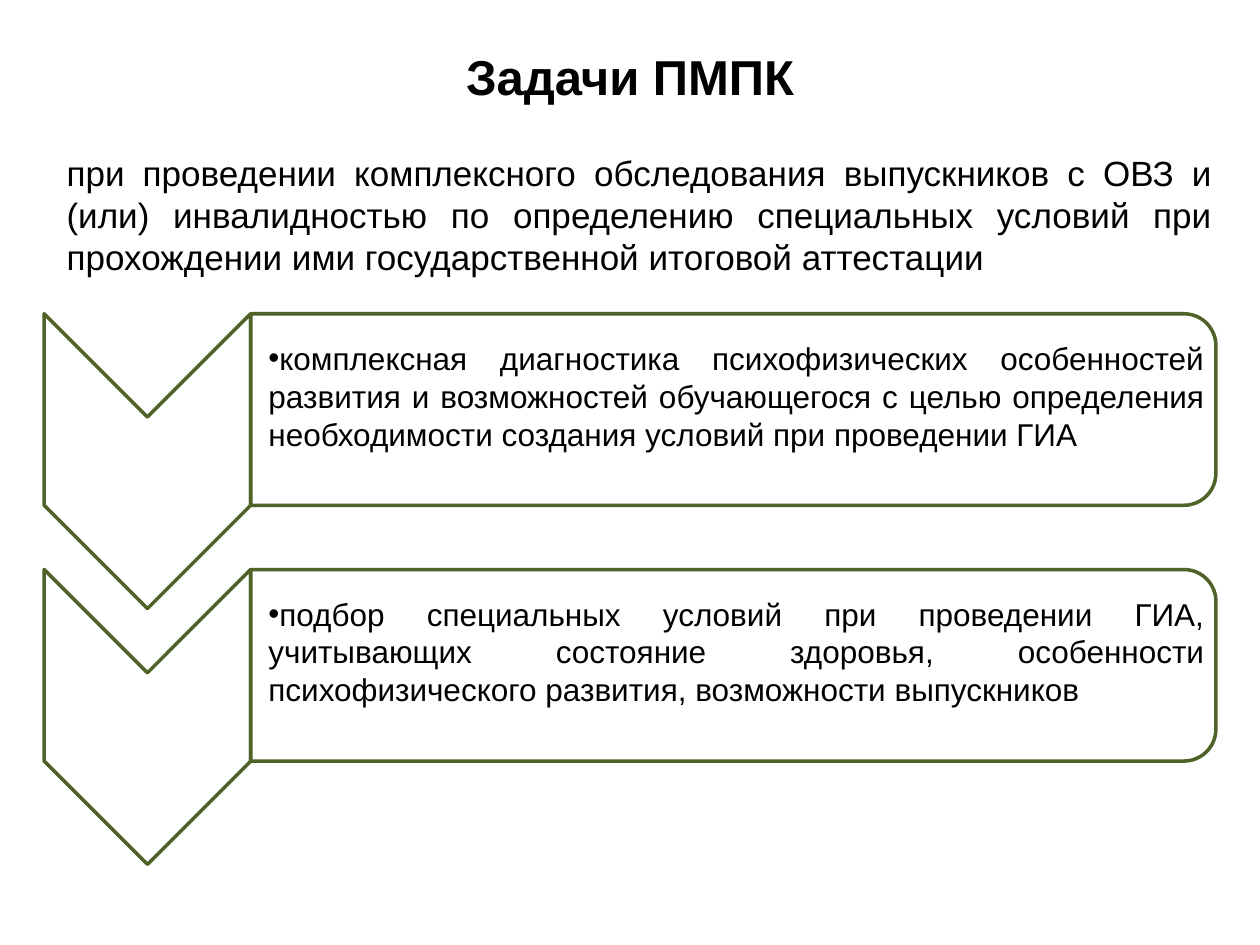
from lxml.etree import SubElement
from pptx import Presentation
from pptx.dml.color import RGBColor
from pptx.enum.shapes import MSO_SHAPE
from pptx.enum.text import MSO_ANCHOR, PP_ALIGN
from pptx.oxml.ns import qn
from pptx.util import Inches, Pt

BLACK = RGBColor(0x00, 0x00, 0x00)
WHITE = RGBColor(0xFF, 0xFF, 0xFF)
GREEN = RGBColor(0x4F, 0x62, 0x28)

TITLE = "Задачи ПМПК"
INTRO = (
    "при проведении комплексного обследования выпускников с ОВЗ и (или) "
    "инвалидностью по определению специальных условий при прохождении ими "
    "государственной итоговой аттестации"
)
TASKS = [
    "комплексная диагностика психофизических особенностей развития и "
    "возможностей обучающегося с целью определения необходимости создания "
    "условий при проведении ГИА",
    "подбор специальных условий при проведении ГИА, учитывающих состояние "
    "здоровья, особенности психофизического развития, возможности выпускников",
]
FIRST_TASK_TOP = 2.49
TASK_STEP = 2.03


def add_text(slide, text, left, top, width, height, size, align,
             bold=False, anchor=MSO_ANCHOR.TOP):
    box = slide.shapes.add_textbox(
        Inches(left), Inches(top), Inches(width), Inches(height))
    frame = box.text_frame
    frame.word_wrap = True
    frame.vertical_anchor = anchor
    paragraph = frame.paragraphs[0]
    paragraph.alignment = align
    run = paragraph.add_run()
    run.text = text
    run.font.name = "Arial"
    run.font.size = Pt(size)
    run.font.bold = bold
    run.font.color.rgb = BLACK
    return frame


def add_turned_outline(slide, preset, left, top, width, height):
    """Add a green outline turned by 90 degrees; the box is the one seen after turning."""
    shift = (width - height) / 2
    outline = slide.shapes.add_shape(
        preset, Inches(left + shift), Inches(top - shift),
        Inches(height), Inches(width))
    outline.rotation = 90
    outline.shadow.inherit = False
    outline.fill.background()
    outline.line.color.rgb = GREEN
    outline.line.width = Pt(2)
    return outline


def fill_translucent_white(panel):
    panel.fill.solid()
    panel.fill.fore_color.rgb = WHITE
    color = panel.fill._xPr.find(qn("a:solidFill")).find(qn("a:srgbClr"))
    SubElement(color, qn("a:alpha"), val="90000")


def add_bullet(paragraph):
    properties = paragraph._p.get_or_add_pPr()
    properties.set("marL", "0")
    properties.set("indent", "0")
    SubElement(properties, qn("a:buFont"), typeface="Arial")
    SubElement(properties, qn("a:buChar"), char="•")


def add_task(slide, text, top):
    add_turned_outline(slide, MSO_SHAPE.CHEVRON, 0.35, top, 1.64, 2.34)
    panel = add_turned_outline(
        slide, MSO_SHAPE.ROUND_2_SAME_RECTANGLE, 1.99, top, 7.66, 1.52)
    fill_translucent_white(panel)
    frame = add_text(slide, text, 1.99, top + 0.08, 7.58, 1.37, 18,
                     PP_ALIGN.JUSTIFY, anchor=MSO_ANCHOR.MIDDLE)
    frame.margin_left = Inches(0.14)
    frame.margin_top = frame.margin_right = Inches(0.01)
    frame.margin_bottom = Inches(0.24)
    add_bullet(frame.paragraphs[0])


def main():
    presentation = Presentation()
    presentation.slide_width = Inches(10)
    presentation.slide_height = Inches(7.5)
    slide = presentation.slides.add_slide(presentation.slide_layouts[6])
    add_text(slide, TITLE, 0.5, 0.3, 9, 0.61, 28, PP_ALIGN.CENTER,
             bold=True, anchor=MSO_ANCHOR.MIDDLE)
    add_text(slide, INTRO, 0.43, 1.15, 9.29, 1.11, 20, PP_ALIGN.JUSTIFY)
    for row, task in enumerate(TASKS):
        add_task(slide, task, FIRST_TASK_TOP + row * TASK_STEP)
    presentation.save("out.pptx")


if __name__ == "__main__":
    main()
